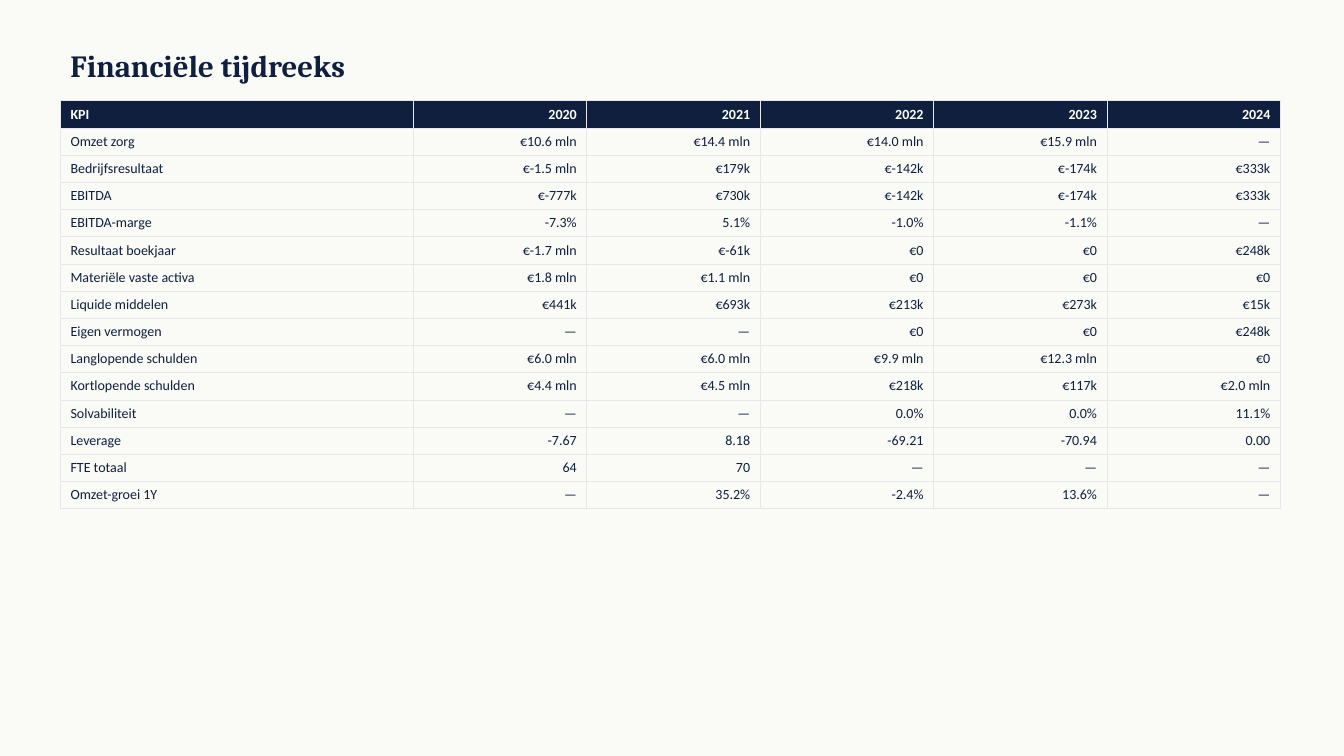
from lxml.etree import SubElement
from pptx import Presentation
from pptx.dml.color import RGBColor
from pptx.enum.text import MSO_ANCHOR as Anchor, PP_ALIGN as Align
from pptx.oxml.ns import qn
from pptx.util import Inches, Pt

TITLE = "Financiële tijdreeks"
HEAD = ("KPI", "2020", "2021", "2022", "2023", "2024")
ROWS = [
    ("Omzet zorg", "€10.6 mln", "€14.4 mln", "€14.0 mln", "€15.9 mln", "—"),
    ("Bedrijfsresultaat", "€-1.5 mln", "€179k", "€-142k", "€-174k", "€333k"),
    ("EBITDA", "€-777k", "€730k", "€-142k", "€-174k", "€333k"),
    ("EBITDA-marge", "-7.3%", "5.1%", "-1.0%", "-1.1%", "—"),
    ("Resultaat boekjaar", "€-1.7 mln", "€-61k", "€0", "€0", "€248k"),
    ("Materiële vaste activa", "€1.8 mln", "€1.1 mln", "€0", "€0", "€0"),
    ("Liquide middelen", "€441k", "€693k", "€213k", "€273k", "€15k"),
    ("Eigen vermogen", "—", "—", "€0", "€0", "€248k"),
    ("Langlopende schulden", "€6.0 mln", "€6.0 mln", "€9.9 mln", "€12.3 mln", "€0"),
    ("Kortlopende schulden", "€4.4 mln", "€4.5 mln", "€218k", "€117k", "€2.0 mln"),
    ("Solvabiliteit", "—", "—", "0.0%", "0.0%", "11.1%"),
    ("Leverage", "-7.67", "8.18", "-69.21", "-70.94", "0.00"),
    ("FTE totaal", "64", "70", "—", "—", "—"),
    ("Omzet-groei 1Y", "—", "35.2%", "-2.4%", "13.6%", "—"),
]
COLORS = {"page": "FAFAF7", "navy": "0F1F3D", "white": "FFFFFF", "rule": "E5E7EB"}
LEFT, TOP = 0.6, 1
LABEL_W, YEAR_W, ROW_H = 3.5, 1.72, 0.27


def color(name):
    return RGBColor.from_string(COLORS[name])


def style(para, face, size, bold, ink):
    font = para.font
    font.name, font.size, font.bold = face, Pt(size), bold
    font.color.rgb = color(ink)


def add_rules(cell):
    """Draw a thin line on all four sides; call before setting the fill."""
    props = cell._tc.get_or_add_tcPr()
    for side in ("a:lnL", "a:lnR", "a:lnT", "a:lnB"):
        line = SubElement(props, qn(side), w=str(Pt(0.5)))
        fill = SubElement(line, qn("a:solidFill"))
        SubElement(fill, qn("a:srgbClr"), val=COLORS["rule"])


def add_title(slide):
    box = slide.shapes.add_textbox(Inches(LEFT), Inches(0.4), Inches(12), Inches(0.5))
    frame = box.text_frame
    frame.word_wrap = True
    frame.vertical_anchor = Anchor.MIDDLE
    frame.text = TITLE
    style(frame.paragraphs[0], "Cambria", 22, True, "navy")


def add_figures(slide):
    data = [HEAD, *ROWS]
    widths = [LABEL_W] + [YEAR_W] * (len(HEAD) - 1)
    table = slide.shapes.add_table(
        len(data), len(HEAD), Inches(LEFT), Inches(TOP),
        Inches(sum(widths)), Inches(ROW_H * len(data))).table
    table.horz_banding = False
    for col, width in zip(table.columns, widths):
        col.width = Inches(width)
    for r, row in enumerate(data):
        table.rows[r].height = Inches(ROW_H)
        is_head = r == 0
        for c, text in enumerate(row):
            cell = table.cell(r, c)
            cell.text = text
            add_rules(cell)
            if is_head:
                cell.fill.solid()
                cell.fill.fore_color.rgb = color("navy")
            else:
                cell.fill.background()
            para = cell.text_frame.paragraphs[0]
            para.alignment = Align.RIGHT if c else Align.LEFT
            style(para, "Calibri", 10, is_head, "white" if is_head else "navy")


def main():
    deck = Presentation()
    deck.slide_width, deck.slide_height = Inches(13.33), Inches(7.5)
    slide = deck.slides.add_slide(deck.slide_layouts[6])
    slide.background.fill.solid()
    slide.background.fill.fore_color.rgb = color("page")
    add_title(slide)
    add_figures(slide)
    deck.save("out.pptx")


if __name__ == "__main__":
    main()
